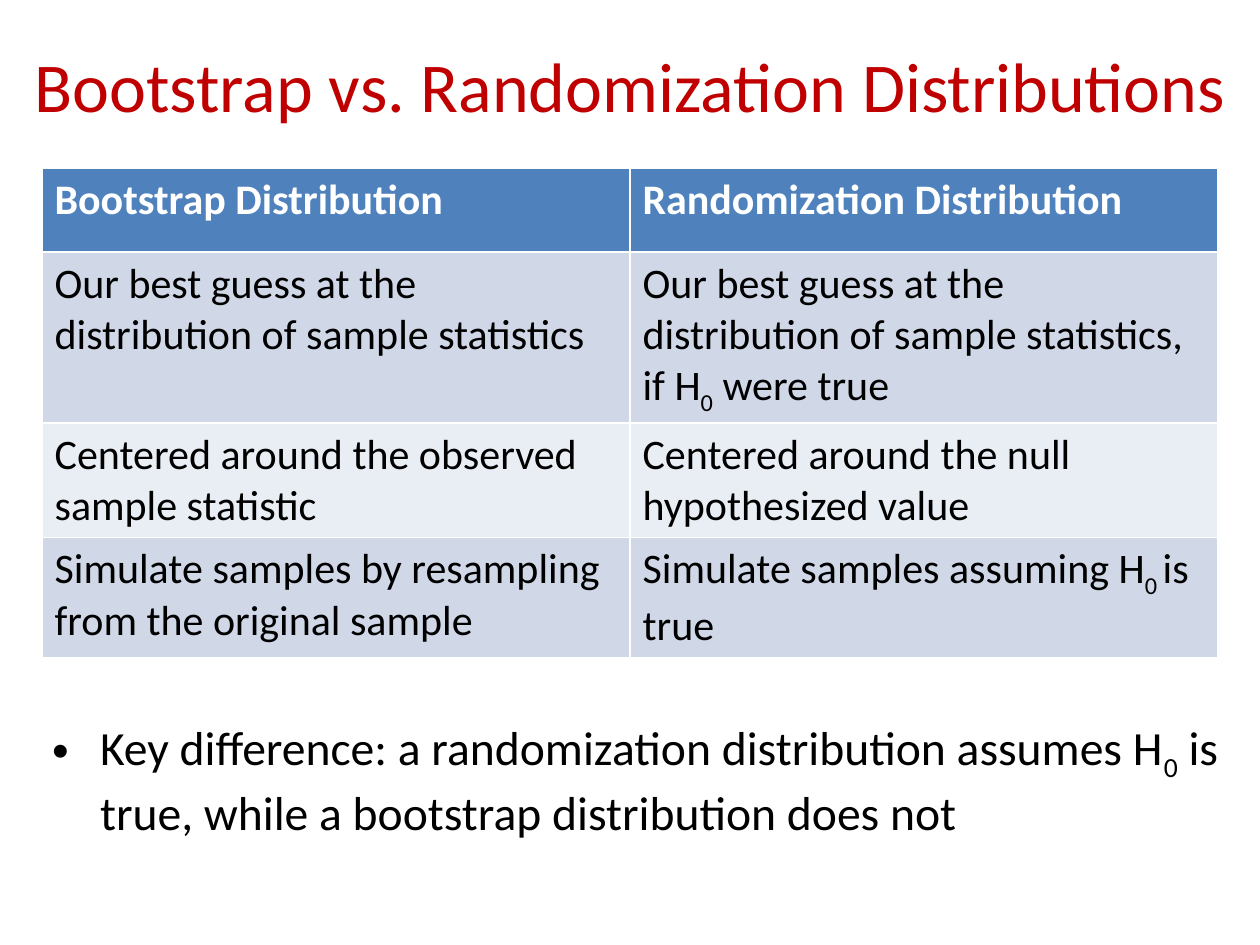
from dataclasses import dataclass

from lxml import etree
from pptx import Presentation
from pptx.dml.color import RGBColor
from pptx.enum.text import MSO_ANCHOR, PP_ALIGN
from pptx.oxml.ns import qn
from pptx.util import Inches, Pt

CENTER, LEFT = PP_ALIGN.CENTER, PP_ALIGN.LEFT
MIDDLE, TOP = MSO_ANCHOR.MIDDLE, MSO_ANCHOR.TOP
BLANK = 6


@dataclass(frozen=True)
class Theme:
    font: str = "Calibri"
    title: str = "C00000"
    text: str = "000000"
    header_text: str = "FFFFFF"
    header_fill: str = "4F81BD"
    bands: tuple = ("D0D8E8", "E9EDF4")
    title_size: float = 40
    table_size: float = 24
    body_size: float = 27.2


class SlideBuilder:
    """Places elements on a slide, with lengths on a 60 x 45 grid."""

    def __init__(self, prs, theme):
        self.theme = theme
        self.unit = prs.slide_width / 60
        self.s = prs.slides.add_slide(prs.slide_layouts[BLANK])

    def grid(self, *lengths):
        return [round(n * self.unit) for n in lengths]

    def add_runs(self, p, text, size, color, bold=False):
        """Add runs to a paragraph; every second part between bars is subscript."""
        style = {"name": self.theme.font, "size": Pt(size), "bold": bold}
        for i, part in enumerate(text.split("|")):
            r = p.add_run()
            r.text = part
            for key, value in style.items():
                setattr(r.font, key, value)
            r.font.color.rgb = RGBColor.from_string(color)
            if i % 2:
                r._r.get_or_add_rPr().set("baseline", "-25000")

    def text(self, box, text, size, color, align=LEFT, anchor=TOP, bullet=False):
        tf = self.s.shapes.add_textbox(*self.grid(*box)).text_frame
        tf.word_wrap = True
        tf.vertical_anchor = anchor
        p = tf.paragraphs[0]
        p.alignment = align
        if bullet:
            pPr = p._p.get_or_add_pPr()
            indent = Inches(0.38)
            pPr.set("marL", str(indent))
            pPr.set("indent", str(-indent))
            etree.SubElement(pPr, qn("a:buFont")).set("typeface", "Arial")
            etree.SubElement(pPr, qn("a:buChar")).set("char", "•")
        self.add_runs(p, text, size, color)

    def table(self, box, rows, heights):
        th = self.theme
        table = self.s.shapes.add_table(len(rows), len(rows[0]), *self.grid(*box)).table
        for i, (row, height) in enumerate(zip(rows, self.grid(*heights))):
            table.rows[i].height = height
            header = i == 0
            fill = th.header_fill if header else th.bands[(i - 1) % 2]
            color = th.header_text if header else th.text
            for j, text in enumerate(row):
                cell = table.cell(i, j)
                cell.fill.solid()
                cell.fill.fore_color.rgb = RGBColor.from_string(fill)
                self.add_runs(cell.text_frame.paragraphs[0], text,
                              th.table_size, color, bold=header)


COMPARISON = [
    ("Bootstrap Distribution", "Randomization Distribution"),
    ("Our best guess at the distribution of sample statistics",
     "Our best guess at the distribution of sample statistics, if H|0| were true"),
    ("Centered around the observed sample statistic",
     "Centered around the null hypothesized value"),
    ("Simulate samples by resampling from the original sample",
     "Simulate samples assuming H|0 |is true"),
]
ROW_HEIGHTS = (4, 8.15, 5.45, 5.7)


def main():
    prs = Presentation()
    prs.slide_width, prs.slide_height = Inches(10), Inches(7.5)
    theme = Theme()
    slide = SlideBuilder(prs, theme)
    slide.text((1, 2, 58, 4), "Bootstrap vs. Randomization Distributions",
               theme.title_size, theme.title, CENTER, MIDDLE)
    slide.table((2, 8, 56, sum(ROW_HEIGHTS)), COMPARISON, ROW_HEIGHTS)
    slide.text((1.9, 33.9, 57, 7),
               "Key difference: a randomization distribution assumes H|0| is true, "
               "while a bootstrap distribution does not",
               theme.body_size, theme.text, bullet=True)
    prs.save("out.pptx")


if __name__ == "__main__":
    main()
